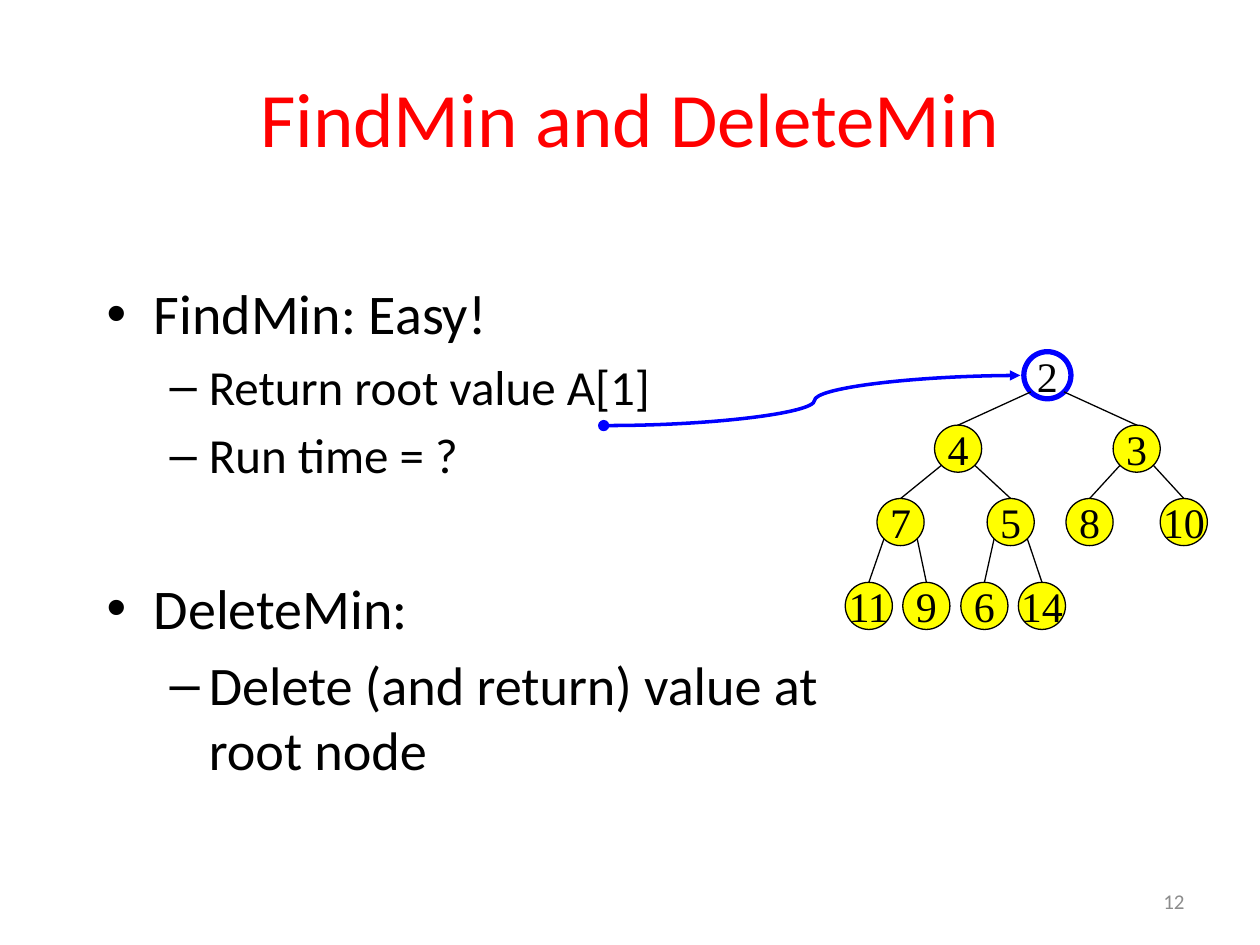
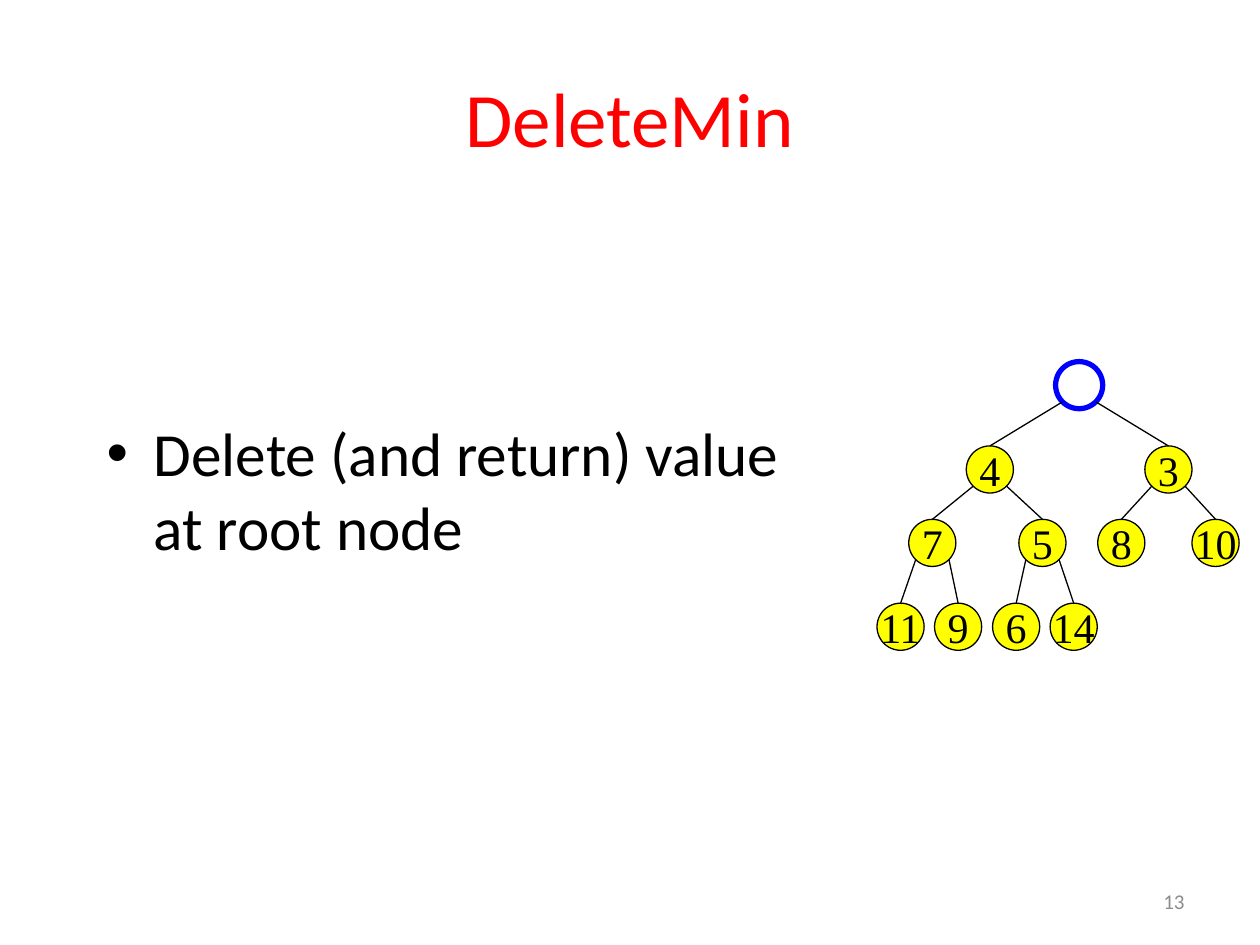
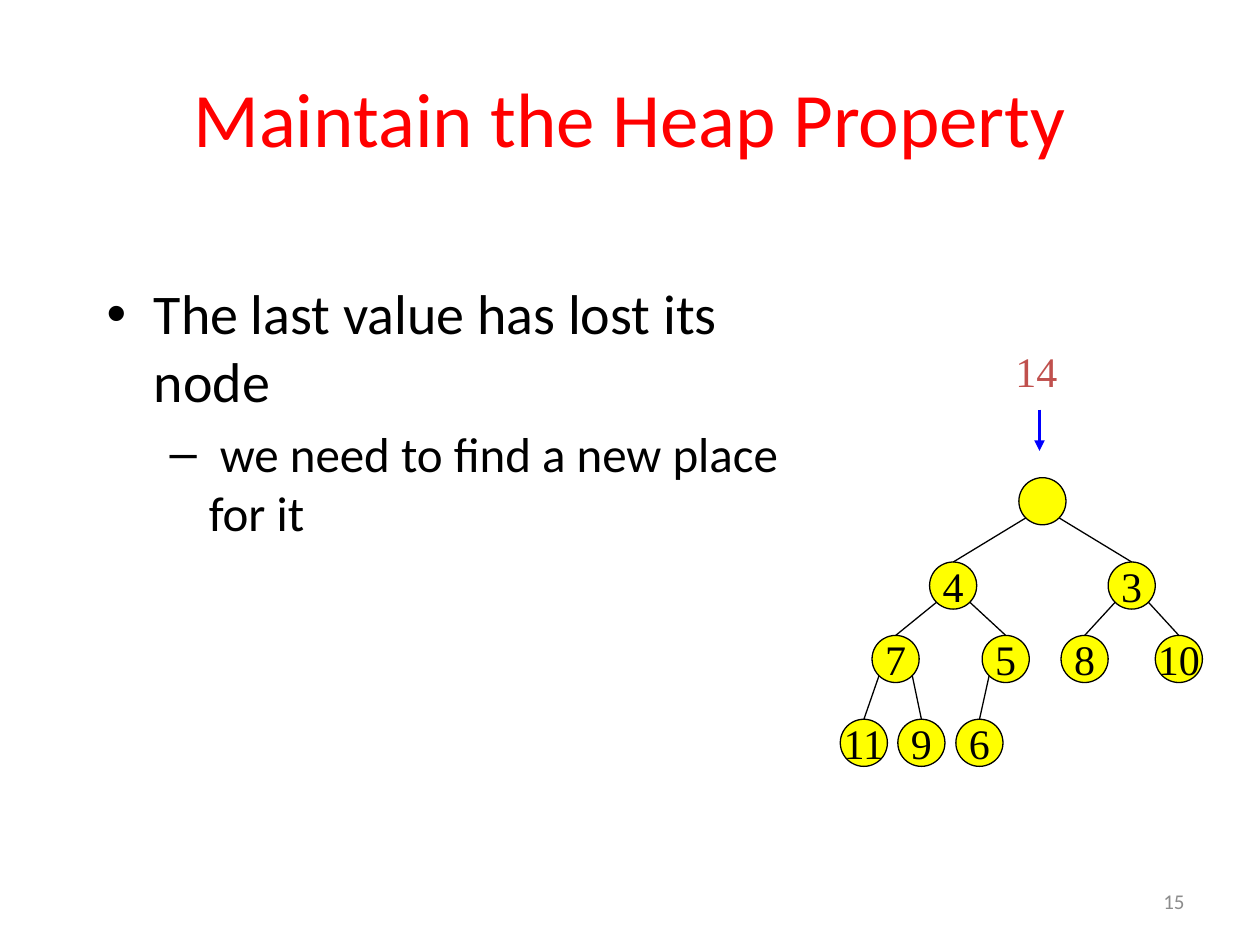
from lxml import etree
from pptx import Presentation
from pptx.dml.color import RGBColor
from pptx.enum.shapes import MSO_CONNECTOR, MSO_SHAPE
from pptx.enum.text import MSO_ANCHOR, PP_ALIGN
from pptx.oxml.ns import qn
from pptx.util import Cm, Pt

OVAL = MSO_SHAPE.OVAL
LINE, CURVE = MSO_CONNECTOR.STRAIGHT, MSO_CONNECTOR.CURVE
TOP, MIDDLE = MSO_ANCHOR.TOP, MSO_ANCHOR.MIDDLE
LEFT, CENTER, RIGHT = PP_ALIGN.LEFT, PP_ALIGN.CENTER, PP_ALIGN.RIGHT

HEX = {
    "title": "FF0000",
    "text": "000000",
    "page": "8C8C8C",
    "node": "FFFF00",
    "edge": "000000",
    "mark": "0000FF",
    "moved": "C0504D",
}
SANS, SERIF = "Calibri", "Times New Roman"

TITLE_BOX = (1.27, 0.76, 22.86, 3.18)
PAGE_BOX = (18.21, 17.65, 5.92, 1.02)

NODE = 0.95
CORNER = 0.14
COLS = [3.6, 1.8, 5.4, 0.64, 2.86, 4.45, 6.35, 0, 1.16, 2.33, 3.49]
RISE = [3.17, 1.69, 0]
HEAP = ["4", "3", "7", "5", "8", "10", "11", "9", "6", "14"]

BULLETS = [("•", 0.95, 0.95), ("–", 2.06, 0.79)]


def color(name):
    return RGBColor.from_string(HEX[name])


def add_run(para, text, size, font, tint):
    run = para.add_run()
    run.text = text
    run.font.size = Pt(size)
    run.font.name = font
    run.font.color.rgb = color(tint)


def add_box(slide, box, anchor):
    frame = slide.shapes.add_textbox(*map(Cm, box)).text_frame
    frame.word_wrap = True
    frame.vertical_anchor = anchor
    return frame


def add_label(slide, box, text, size, tint, align):
    para = add_box(slide, box, MIDDLE).paragraphs[0]
    para.alignment = align
    add_run(para, text, size, SANS, tint)


def add_body(slide, box, items):
    frame = add_box(slide, box, TOP)
    for i, (level, text, size, gap) in enumerate(items):
        para = frame.add_paragraph() if i else frame.paragraphs[0]
        para.level = level
        para.alignment = LEFT
        para.space_before = Pt(size * 0.2 + gap)
        sign, margin, hang = BULLETS[level]
        props = para._p.get_or_add_pPr()
        props.set("marL", str(Cm(margin)))
        props.set("indent", str(-Cm(hang)))
        etree.SubElement(props, qn("a:buFont"), typeface="Arial")
        etree.SubElement(props, qn("a:buChar"), char=sign)
        add_run(para, text, size, SANS, "text")


def add_dot(slide, box, text="", fill="node", line="edge", width=0.75, tint="text"):
    dot = slide.shapes.add_shape(OVAL, *map(Cm, box))
    dot.shadow.inherit = False
    if fill:
        dot.fill.solid()
        dot.fill.fore_color.rgb = color(fill)
    else:
        dot.fill.background()
    if line:
        dot.line.color.rgb = color(line)
        dot.line.width = Pt(width)
    else:
        dot.line.fill.background()
    if text:
        frame = dot.text_frame
        frame.word_wrap = False
        frame.vertical_anchor = MIDDLE
        para = frame.paragraphs[0]
        para.alignment = CENTER
        add_run(para, text, 24, SERIF, tint)


def add_line(slide, start, end, kind=LINE, tint="edge", width=0.75, arrow=False):
    link = slide.shapes.add_connector(kind, *map(Cm, (*start, *end)))
    link.line.color.rgb = color(tint)
    link.line.width = Pt(width)
    if arrow:
        etree.SubElement(link.line._get_or_add_ln(), qn("a:tailEnd"), type="triangle")
    etree.SubElement(link._element.spPr, qn("a:effectLst"))


def add_tree(slide, box, values, root):
    left, top, _, height = box
    base = top + height - NODE
    rows = [top] + [base - rise for rise in RISE]
    spots = [
        (left + COLS[i], rows[(i + 1).bit_length() - 1])
        for i in range(len(values))
    ]
    for i, (x, y) in enumerate(spots):
        style = {} if i else root
        add_dot(slide, (x, y, NODE, NODE), values[i], **style)
    for i, (x, y) in enumerate(spots[1:], 1):
        up_x, up_y = spots[(i - 1) // 2]
        side = CORNER if i % 2 else NODE - CORNER
        start = (up_x + side, up_y + NODE - CORNER)
        add_line(slide, start, (x + NODE / 2, y))


def add_pointer(slide, box):
    x, y, width, height = box
    size = 0.2
    add_dot(slide, (x, y + height - size / 2, size, size), fill="mark", line="mark")
    add_line(slide, (x + size, y + height), (x + width, y), CURVE, "mark", 2, True)


def add_moved(slide, box, text):
    x, y, width, height = box
    add_dot(slide, (x, y, NODE, NODE), text, fill=None, line=None, tint="moved")
    mid = x + width / 2
    add_line(slide, (mid, y + 1.27), (mid, y + height), tint="mark", width=2, arrow=True)


def add_page(deck, title, page):
    slide = deck.slides.add_slide(deck.slide_layouts[6])
    add_label(slide, PAGE_BOX, page, 12, "page", RIGHT)
    add_label(slide, TITLE_BOX, title, 44, "title", CENTER)
    return slide


def main():
    deck = Presentation()
    deck.slide_width, deck.slide_height = Cm(25.4), Cm(19.05)
    ring = {"fill": None, "line": "mark", "width": 3}

    slide = add_page(deck, "FindMin and DeleteMin", "12")
    add_body(slide, (1.9, 5.5, 14.94, 11.43), [
        (0, "FindMin: Easy!", 32, 0),
        (1, "Return root value A[1]", 28, 0),
        (1, "Run time = ?", 28, 0),
        (0, "DeleteMin:", 32, 45),
        (1, "Delete (and return) value at root node", 31, 0),
    ])
    add_tree(slide, (17.04, 7.09, 7.3, 5.6), ["2"] + HEAP, ring)
    add_pointer(slide, (12.07, 7.57, 8.5, 1.01))

    slide = add_page(deck, "DeleteMin", "13")
    add_body(slide, (1.9, 8.25, 14.94, 4.88), [
        (0, "Delete (and return) value at root node", 35, 0),
    ])
    add_tree(slide, (17.68, 7.29, 7.3, 5.82), [""] + HEAP, ring)

    slide = add_page(deck, "Maintain the Heap Property", "15")
    add_body(slide, (1.9, 5.5, 14.17, 11.43), [
        (0, "The last value has lost its node", 32, 0),
        (1, " we need to find a new place for it", 28, 0),
    ])
    add_tree(slide, (16.94, 9.63, 7.3, 5.82), [""] + HEAP[:-1], {})
    add_moved(slide, (20.42, 6.99, 1.07, 2.1), HEAP[-1])

    deck.save("out.pptx")


if __name__ == "__main__":
    main()
